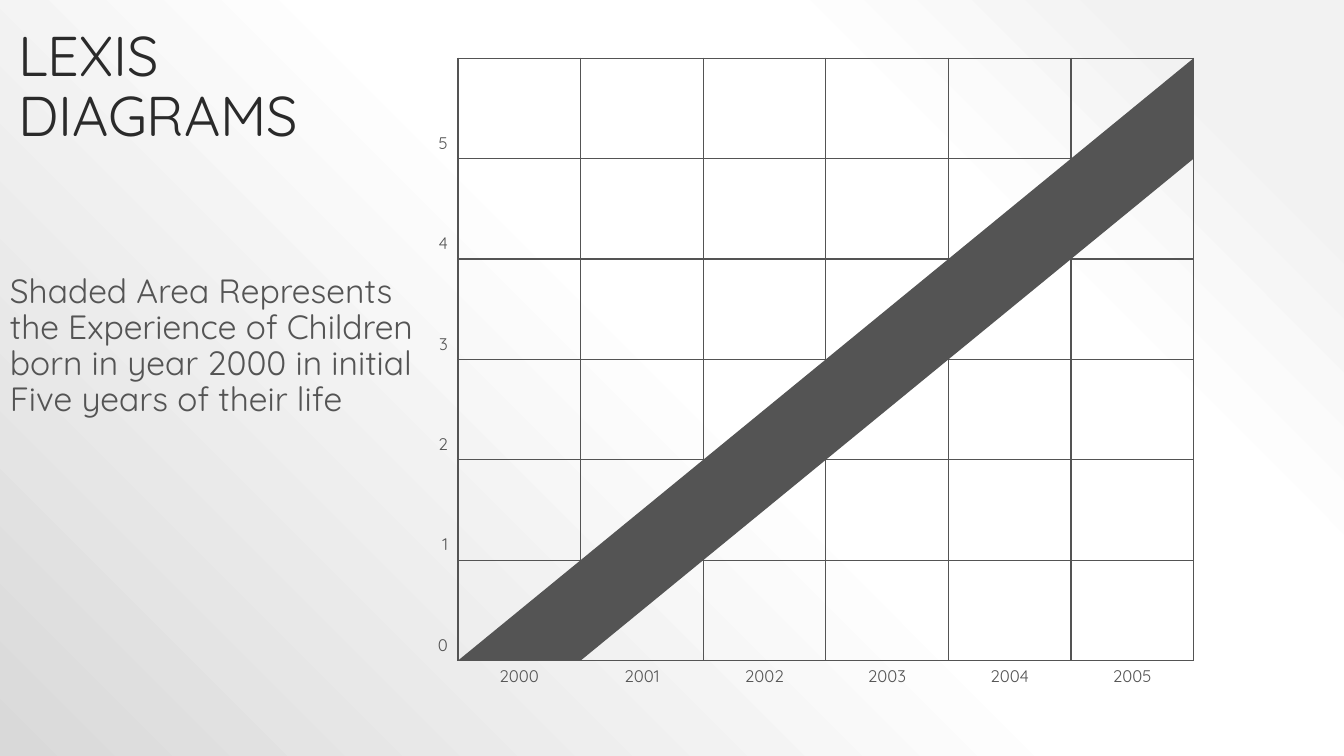
from dataclasses import dataclass

from pptx import Presentation
from pptx.dml.color import RGBColor
from pptx.enum.shapes import MSO_SHAPE
from pptx.enum.text import MSO_ANCHOR, MSO_AUTO_SIZE, PP_ALIGN
from pptx.oxml import parse_xml
from pptx.oxml.ns import nsdecls, qn
from pptx.util import Cm, Pt

RIGHT_TRIANGLE = MSO_SHAPE.RIGHT_TRIANGLE
BOTTOM, TOP = MSO_ANCHOR.BOTTOM, MSO_ANCHOR.TOP
LEFT, CENTER, RIGHT = PP_ALIGN.LEFT, PP_ALIGN.CENTER, PP_ALIGN.RIGHT
FIT_SHAPE, NO_FIT = MSO_AUTO_SIZE.SHAPE_TO_FIT_TEXT, MSO_AUTO_SIZE.NONE

FONT = "Quicksand"
DARK, GRAY = "2A2A2A", "545454"
GRADIENT_STOPS = [(10, "F2F2F2"), (28, "FFFFFF"), (48, "FFFFFF"), (100, "D9D9D9")]
PLAIN_TABLE_STYLE = "{2D5ABB26-0587-4C30-8999-92F81FD0307C}"

YEARS = range(2000, 2006)
AGES = range(5, -1, -1)
TABLE_LEFT, TABLE_TOP = 10.36, 1.47
AGE_WIDTH, YEAR_HEIGHT = 1.18, 1.04
CELL_WIDTH, CELL_HEIGHT = 3.09, 2.53
GRID_LEFT = TABLE_LEFT + AGE_WIDTH


@dataclass
class Triangle:
    column: int
    age: int
    flip: str


def color(value: str) -> RGBColor:
    return RGBColor.from_string(value)


def format_paragraph(paragraph, size: float, value: str, alignment=LEFT, spacing: float = 1) -> None:
    paragraph.alignment = alignment
    paragraph.line_spacing = spacing
    paragraph.font.name = FONT
    paragraph.font.size = Pt(size)
    paragraph.font.color.rgb = color(value)


def paint_background(slide) -> None:
    """Radial gradient spreading from the top right corner."""
    slide.background.fill.solid()
    stops = "".join(
        f'<a:gs pos="{position * 1000}"><a:srgbClr val="{value}"/></a:gs>'
        for position, value in GRADIENT_STOPS
    )
    gradient = parse_xml(
        f'<a:gradFill {nsdecls("a")} rotWithShape="1"><a:gsLst>{stops}</a:gsLst>'
        '<a:path path="circle"><a:fillToRect l="100000" b="100000"/></a:path></a:gradFill>'
    )
    solid = slide.element.find(".//" + qn("a:solidFill"))
    solid.getparent().replace(solid, gradient)


def add_title(slide) -> None:
    title = slide.shapes.title
    title.left, title.top, title.width, title.height = Cm(0.2), Cm(0.2), Cm(8.46), Cm(3.68)
    frame = title.text_frame
    frame.text = "LEXIS\vDIAGRAMS"
    frame.word_wrap = True
    frame.auto_size = NO_FIT
    frame.vertical_anchor = BOTTOM
    format_paragraph(frame.paragraphs[0], 40, DARK, spacing=0.9)


def add_explanation(slide) -> None:
    box = slide.shapes.add_textbox(Cm(0), Cm(6.78), Cm(11), Cm(4.88))
    frame = box.text_frame
    frame.word_wrap = True
    frame.auto_size = FIT_SHAPE
    frame.text = (
        "Shaded Area Represents\n"
        "the Experience of Children born in year 2000 in initial Five years of their life"
    )
    for paragraph in frame.paragraphs:
        format_paragraph(paragraph, 24, GRAY, spacing=0.9)


def draw_borders(cell, sides: str) -> None:
    """Draw the sides named by letters from L, R, T, B, in that order."""
    properties = cell._tc.get_or_add_tcPr()
    for side in sides:
        properties.append(parse_xml(
            f'<a:ln{side} {nsdecls("a")} w="12700"><a:solidFill>'
            f'<a:srgbClr val="{GRAY}"/></a:solidFill></a:ln{side}>'
        ))


def fill_cell(cell, sides: str, text: str = "", alignment=LEFT, anchor=TOP) -> None:
    draw_borders(cell, sides)
    cell.fill.background()
    cell.vertical_anchor = anchor
    cell.text = text
    format_paragraph(cell.text_frame.paragraphs[0], 12, GRAY, alignment)


def add_grid(slide) -> None:
    rows, columns = len(AGES), len(YEARS)
    frame = slide.shapes.add_table(
        rows + 1, columns + 1, Cm(TABLE_LEFT), Cm(TABLE_TOP),
        Cm(AGE_WIDTH + columns * CELL_WIDTH), Cm(rows * CELL_HEIGHT + YEAR_HEIGHT),
    )
    table = frame.table
    table.first_row = table.horz_banding = False
    frame.element.find(".//" + qn("a:tableStyleId")).text = PLAIN_TABLE_STYLE
    for index, column in enumerate(table.columns):
        column.width = Cm(CELL_WIDTH if index else AGE_WIDTH)
    for index, row in enumerate(table.rows):
        row.height = Cm(CELL_HEIGHT if index < rows else YEAR_HEIGHT)

    for row, age in enumerate(AGES):
        fill_cell(table.cell(row, 0), "R", str(age), RIGHT, BOTTOM)
        for column in range(1, columns + 1):
            fill_cell(table.cell(row, column), "LRTB")
    fill_cell(table.cell(rows, 0), "")
    for column, year in enumerate(YEARS, 1):
        fill_cell(table.cell(rows, column), "T", str(year), CENTER)


def add_triangle(group, triangle: Triangle) -> None:
    shape = group.shapes.add_shape(
        RIGHT_TRIANGLE,
        Cm(GRID_LEFT + triangle.column * CELL_WIDTH),
        Cm(TABLE_TOP + AGES.index(triangle.age) * CELL_HEIGHT),
        Cm(CELL_WIDTH), Cm(CELL_HEIGHT),
    )
    shape.element.spPr.find(qn("a:xfrm")).set(triangle.flip, "1")
    shape.shadow.inherit = False
    shape.fill.solid()
    shape.fill.fore_color.rgb = color(GRAY)
    shape.line.fill.background()


def add_cohort_band(slide) -> None:
    """Shade the diagonal band of the children born in the first year."""
    lower = [Triangle(age, age, "flipH") for age in AGES]
    upper = [Triangle(age + 1, age, "flipV") for age in AGES if age + 1 < len(YEARS)]
    group = slide.shapes.add_group_shape()
    for triangle in lower + upper:
        add_triangle(group, triangle)


def main() -> None:
    presentation = Presentation()
    presentation.slide_width, presentation.slide_height = Cm(33.87), Cm(19.05)
    slide = presentation.slides.add_slide(presentation.slide_layouts[5])
    paint_background(slide)
    add_title(slide)
    add_grid(slide)
    add_explanation(slide)
    add_cohort_band(slide)
    presentation.save("out.pptx")


if __name__ == "__main__":
    main()
